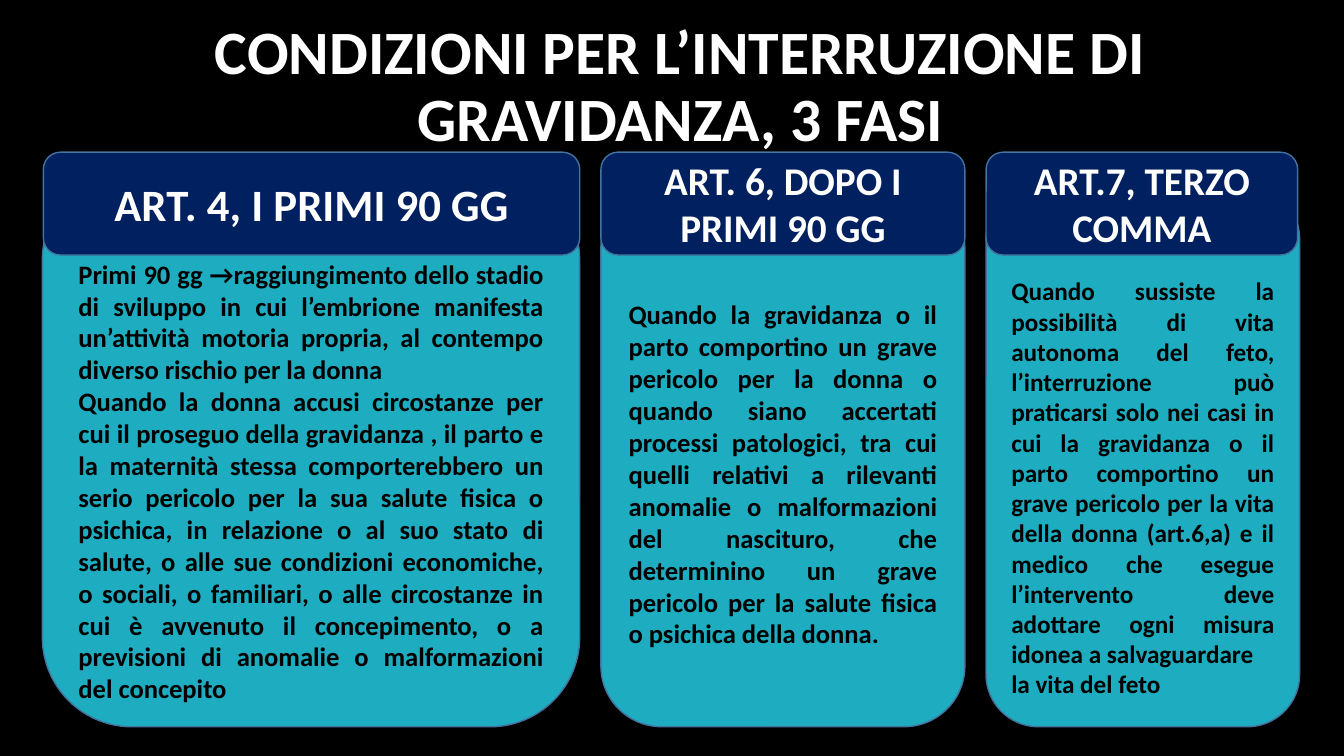
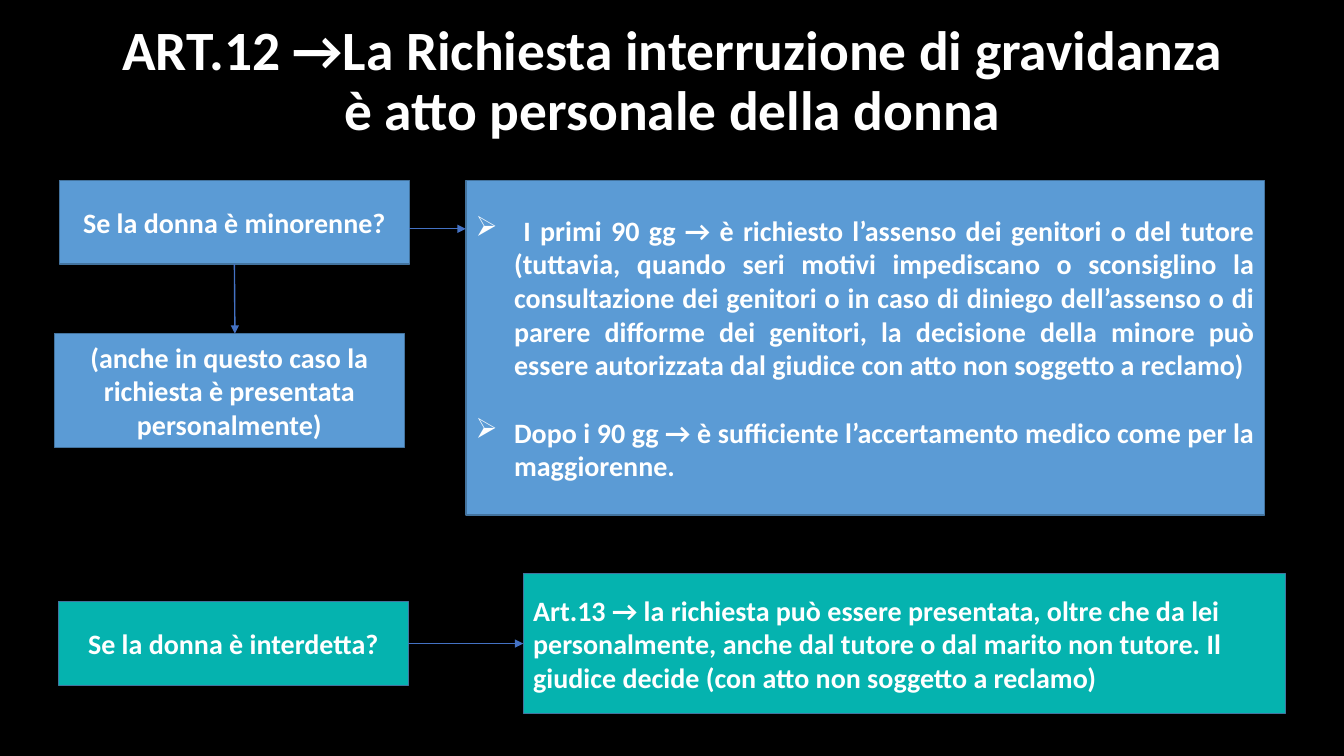
from lxml import etree
from pptx import Presentation
from pptx.dml.color import RGBColor
from pptx.enum import shapes, text
from pptx.oxml import ns
from pptx.util import Inches, Pt

HUE = {
    "black": "000000", "white": "FFFFFF", "cyan": "1EADC0", "navy": "002060",
    "blue": "5B9BD5", "teal": "05B3AF", "edge": "43739E", "arrow": "4472C4",
}
FONT = "Calibri"
LEFT, MID, FULL = text.PP_ALIGN.LEFT, text.PP_ALIGN.CENTER, text.PP_ALIGN.JUSTIFY
RECT = shapes.MSO_SHAPE.RECTANGLE
ROUND = shapes.MSO_SHAPE.ROUNDED_RECTANGLE

PHASES = [
    {"head": "ART. 4, I PRIMI 90 GG", "head_size": 32, "head_at": (0.43, 5.32),
     "at": (0.42, 1.69, 5.33, 5.52), "size": 19, "top": 0.69,
     "body": [
         "Primi 90 gg →raggiungimento dello stadio di sviluppo in cui l’embrione manifesta "
         "un’attività motoria propria, al contempo diverso rischio per la donna",
         "Quando la donna accusi circostanze per cui il proseguo della gravidanza , il parto e "
         "la maternità stessa comporterebbero un serio pericolo per la sua salute fisica o "
         "psichica, in relazione o al suo stato di salute, o alle sue condizioni economiche, "
         "o sociali, o familiari, o alle circostanze in cui è avvenuto il concepimento, o a "
         "previsioni di anomalie o malformazioni del concepito"]},
    {"head": "ART. 6, DOPO I PRIMI 90 GG", "head_size": 28, "head_at": (5.96, 3.61),
     "at": (5.96, 1.85, 3.61, 5.36), "size": 19, "top": 0.39,
     "body": [
         "Quando la gravidanza o il parto comportino un grave pericolo per la donna o quando "
         "siano accertati processi patologici, tra cui quelli relativi a rilevanti anomalie o "
         "malformazioni del nascituro, che determinino un grave pericolo per la salute fisica "
         "o psichica della donna."]},
    {"head": "ART.7, TERZO COMMA", "head_size": 28, "head_at": (9.78, 3.09),
     "at": (9.78, 1.85, 3.11, 5.36), "size": 18, "top": 0.66,
     "body": [
         "Quando sussiste la possibilità di vita autonoma del feto, l’interruzione può "
         "praticarsi solo nei casi in cui la gravidanza o il parto comportino un grave "
         "pericolo per la vita della donna (art.6,a) e il medico che esegue l’intervento deve "
         "adottare ogni misura idonea a salvaguardare",
         "la vita del feto"]},
]

BOXES = {
    "minor": ((0.59, 1.79, 3.47, 0.83), "blue", MID, ["Se la donna è minorenne?"]),
    "barred": ((0.58, 5.97, 3.47, 0.83), "teal", MID, ["Se la donna è interdetta?"]),
    "tutor": ((5.19, 5.69, 7.56, 1.39), "teal", LEFT, [
        "Art.13 → la richiesta può essere presentata, oltre che da lei personalmente, anche "
        "dal tutore o dal marito non tutore. Il giudice decide (con atto non soggetto a "
        "reclamo)"]),
    "also": ((0.54, 3.31, 3.47, 1.13), "blue", MID, [
        "(anche in questo caso la richiesta è presentata personalmente)"]),
    "terms": ((4.62, 1.79, 7.92, 3.32), "blue", FULL, [
        " I primi 90 gg → è richiesto l’assenso dei genitori o del tutore (tuttavia, quando "
        "seri motivi impediscano o sconsiglino la consultazione dei genitori o in caso di "
        "diniego dell’assenso o di parere difforme dei genitori, la decisione della minore "
        "può essere autorizzata dal giudice con atto non soggetto a reclamo)",
        "Dopo i 90 gg → è sufficiente l’accertamento medico come per la maggiorenne."]),
}
ARROWS = [
    ((2.33, 2.62, 2.33, 3.31), ("minor", 2), None),
    ((4.06, 2.27, 4.62, 2.27), None, None),
    ((4.05, 6.39, 5.19, 6.39), ("barred", 3), ("tutor", 1)),
]


def color(name):
    return RGBColor.from_string(HUE[name])


def write(shape, lines, size, hue="white", align=MID, space=1.0, bullet=None, gap=0):
    frame = shape.text_frame
    frame.word_wrap = True
    frame.vertical_anchor = text.MSO_ANCHOR.MIDDLE
    for i, line in enumerate(lines):
        para = frame.add_paragraph() if i else frame.paragraphs[0]
        if bullet:
            props = para._p.get_or_add_pPr()
            props.set("marL", str(Inches(0.38)))
            props.set("indent", str(-Inches(0.38)))
            etree.SubElement(props, ns.qn("a:buChar")).set("char", bullet)
        para.alignment = align
        para.line_spacing = space
        if i and gap:
            para.space_before = Pt(gap)
        run = para.add_run()
        run.text = line
        font = run.font
        font.name, font.size, font.bold = FONT, Pt(size), True
        font.color.rgb = color(hue)


def block(slide, kind, at, fill):
    shape = slide.shapes.add_shape(kind, *map(Inches, at))
    shape.shadow.inherit = False
    shape.fill.solid()
    shape.fill.fore_color.rgb = color(fill)
    shape.line.color.rgb = color("edge")
    shape.line.width = Pt(1)
    return shape


def arrow(slide, ends, start, stop, made):
    line = slide.shapes.add_connector(shapes.MSO_CONNECTOR.STRAIGHT, *map(Inches, ends))
    if start:
        line.begin_connect(made[start[0]], start[1])
    if stop:
        line.end_connect(made[stop[0]], stop[1])
    line.line.color.rgb = color("arrow")
    line.line.width = Pt(1)
    stroke = line.line._get_or_add_ln()
    etree.SubElement(stroke, ns.qn("a:tailEnd")).set("type", "triangle")
    etree.SubElement(line._element.spPr, ns.qn("a:effectLst"))


def page(deck, title, at, size):
    slide = deck.slides.add_slide(deck.slide_layouts[6])
    slide.background.fill.solid()
    slide.background.fill.fore_color.rgb = color("black")
    write(slide.shapes.add_textbox(*map(Inches, at)), [title], size, space=0.9)
    return slide


def phases(deck):
    slide = page(deck, "CONDIZIONI PER L’INTERRUZIONE DI GRAVIDANZA, 3 FASI",
                 (1, 0.15, 11.5, 1.45), 44)
    for item in PHASES:
        card = block(slide, ROUND, item["at"], "cyan")
        card.text_frame.margin_top = Inches(item["top"])
        write(card, item["body"], item["size"], "black", FULL)
    for item in PHASES:
        left, width = item["head_at"]
        head = block(slide, ROUND, (left, 1.51, width, 1.02), "navy")
        write(head, [item["head"]], item["head_size"])


def request(deck):
    slide = page(deck, "ART.12 →La Richiesta interruzione di gravidanza "
                 "è atto personale della donna", (0.92, 0.4, 11.5, 0.83), 39.6)
    made = {}
    for name, (at, fill, align, lines) in BOXES.items():
        made[name] = block(slide, RECT, at, fill)
        bullet = "➢" if name == "terms" else None
        write(made[name], lines, 20, align=align, bullet=bullet, gap=24)
    for ends, start, stop in ARROWS:
        arrow(slide, ends, start, stop, made)


def main():
    deck = Presentation()
    deck.slide_width, deck.slide_height = Inches(13.33), Inches(7.5)
    phases(deck)
    request(deck)
    deck.save("out.pptx")


if __name__ == "__main__":
    main()
